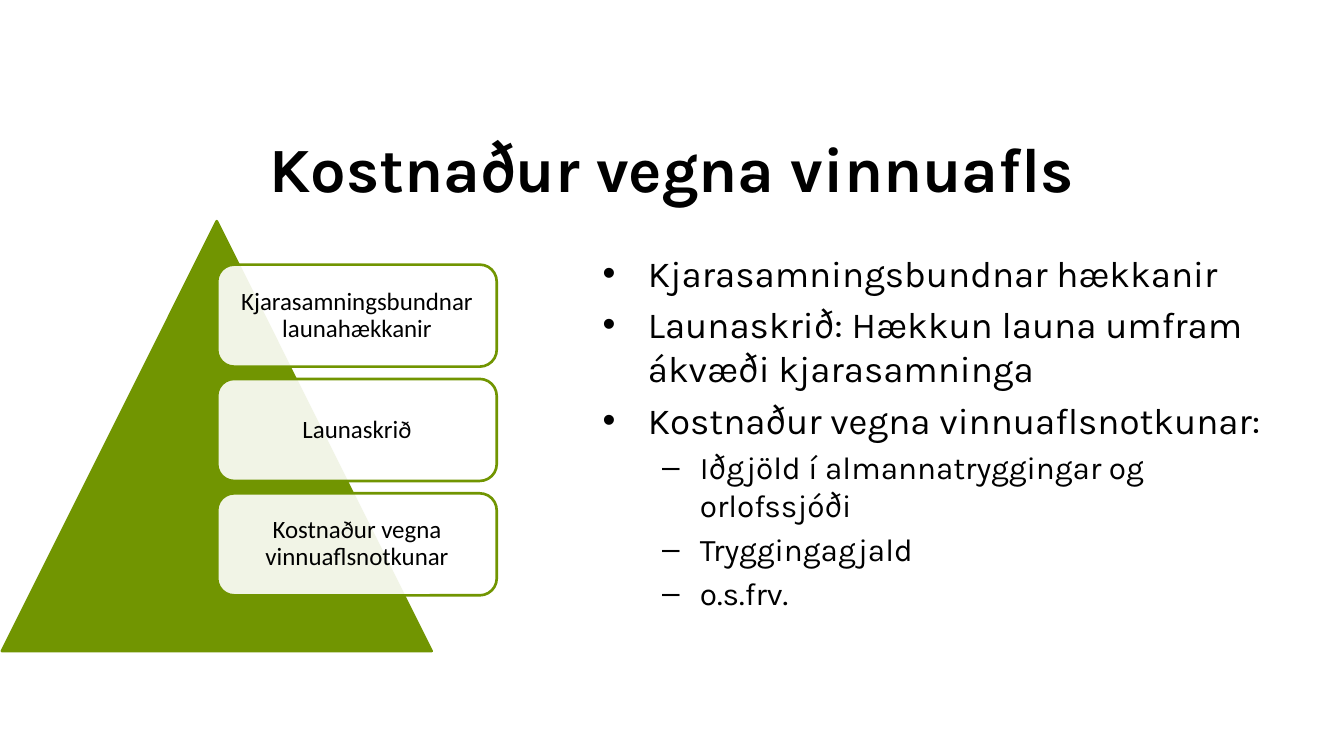
from lxml.etree import SubElement
from pptx import Presentation
from pptx.dml.color import RGBColor
from pptx.enum.shapes import MSO_SHAPE
from pptx.enum.text import MSO_ANCHOR, PP_ALIGN
from pptx.oxml.ns import qn
from pptx.util import Pt

PX = 9144  # EMU per px, 100 px to the inch
GREEN, WHITE, BLACK = "719501", "FFFFFF", "000000"


def px(length):
    return length * PX


def color(value):
    return RGBColor.from_string(value)


def set_format(target, values):
    for name, value in values.items():
        setattr(target, name, value)


class SlideBuilder:
    heading = {"name": "Karla", "size": Pt(48), "bold": True}
    label = {"name": "Calibri", "size": Pt(19)}
    # level: (font size, left margin, hanging indent, bullet)
    levels = [(28, 48, 48, "•"), (24, 103, 40, "–")]

    def __init__(self, slide):
        self.slide = slide

    def frame(self, shape, inset_x, inset_y, anchor):
        set_format(shape.text_frame, {
            "word_wrap": True, "vertical_anchor": anchor,
            "margin_left": px(inset_x), "margin_right": px(inset_x),
            "margin_top": px(inset_y), "margin_bottom": px(inset_y)})
        return shape.text_frame

    def add_text(self, paragraph, text, font, **layout):
        run = paragraph.add_run()
        run.text = text
        set_format(paragraph, layout)
        set_format(run.font, font)
        run.font.color.rgb = color(BLACK)

    def text_box(self, box, anchor):
        shape = self.slide.shapes.add_textbox(*map(px, box))
        return self.frame(shape, 13, 6, anchor)

    def title(self, box, text):
        frame = self.text_box(box, MSO_ANCHOR.MIDDLE)
        self.add_text(frame.paragraphs[0], text, self.heading,
                      alignment=PP_ALIGN.CENTER)

    def shape(self, kind, box, fill, opacity=100):
        shape = self.slide.shapes.add_shape(kind, *map(px, box))
        shape.shadow.inherit = False
        shape.fill.solid()
        shape.fill.fore_color.rgb = color(fill)
        if opacity < 100:
            fill_color = shape.element.spPr.find(qn("a:solidFill"))[0]
            SubElement(fill_color, qn("a:alpha"), val=str(opacity * 1000))
        shape.line.color.rgb = color(GREEN)
        shape.line.width = Pt(2)
        return shape

    def card(self, box, text):
        shape = self.shape(MSO_SHAPE.ROUNDED_RECTANGLE, box, WHITE, 90)
        frame = self.frame(shape, 8, 8, MSO_ANCHOR.MIDDLE)
        self.add_text(frame.paragraphs[0], text, self.label,
                      alignment=PP_ALIGN.CENTER, line_spacing=0.9)

    def bullets(self, box, items):
        frame = self.text_box(box, MSO_ANCHOR.TOP)
        for index, (level, text) in enumerate(items):
            paragraph = frame.add_paragraph() if index else frame.paragraphs[0]
            size, margin, hanging, mark = self.levels[level]
            properties = paragraph._p.get_or_add_pPr()
            properties.set("marL", str(px(margin)))
            properties.set("indent", str(-px(hanging)))
            SubElement(properties, qn("a:buFont"), typeface="Arial")
            SubElement(properties, qn("a:buChar"), char=mark)
            self.add_text(paragraph, text, {"name": "Karla", "size": Pt(size)},
                          level=level,
                          space_before=Pt(size * 0.2 if index else 0))


def main():
    presentation = Presentation()
    presentation.slide_width = px(1423)
    presentation.slide_height = px(800)
    slide = presentation.slides.add_slide(presentation.slide_layouts[6])
    builder = SlideBuilder(slide)

    # Title
    builder.title((71, 111, 1281, 133), "Kostnaður vegna vinnuafls")

    # Pyramid with its three cards
    builder.shape(MSO_SHAPE.ISOSCELES_TRIANGLE, (2, 234, 455, 455), GREEN)
    cards = ["Kjarasamningsbundnar launahækkanir", "Launaskrið",
             "Kostnaður vegna vinnuaflsnotkunar"]
    for row, text in enumerate(cards):
        builder.card((230, 280 + row * 121, 296, 108), text)

    # Bullet list
    builder.bullets((625, 259, 727, 455), [
        (0, "Kjarasamningsbundnar hækkanir"),
        (0, "Launaskrið: Hækkun launa umfram ákvæði kjarasamninga"),
        (0, "Kostnaður vegna vinnuaflsnotkunar:"),
        (1, "Iðgjöld í almannatryggingar og orlofssjóði"),
        (1, "Tryggingagjald"),
        (1, "o.s.frv."),
    ])

    presentation.save("out.pptx")


if __name__ == "__main__":
    main()
